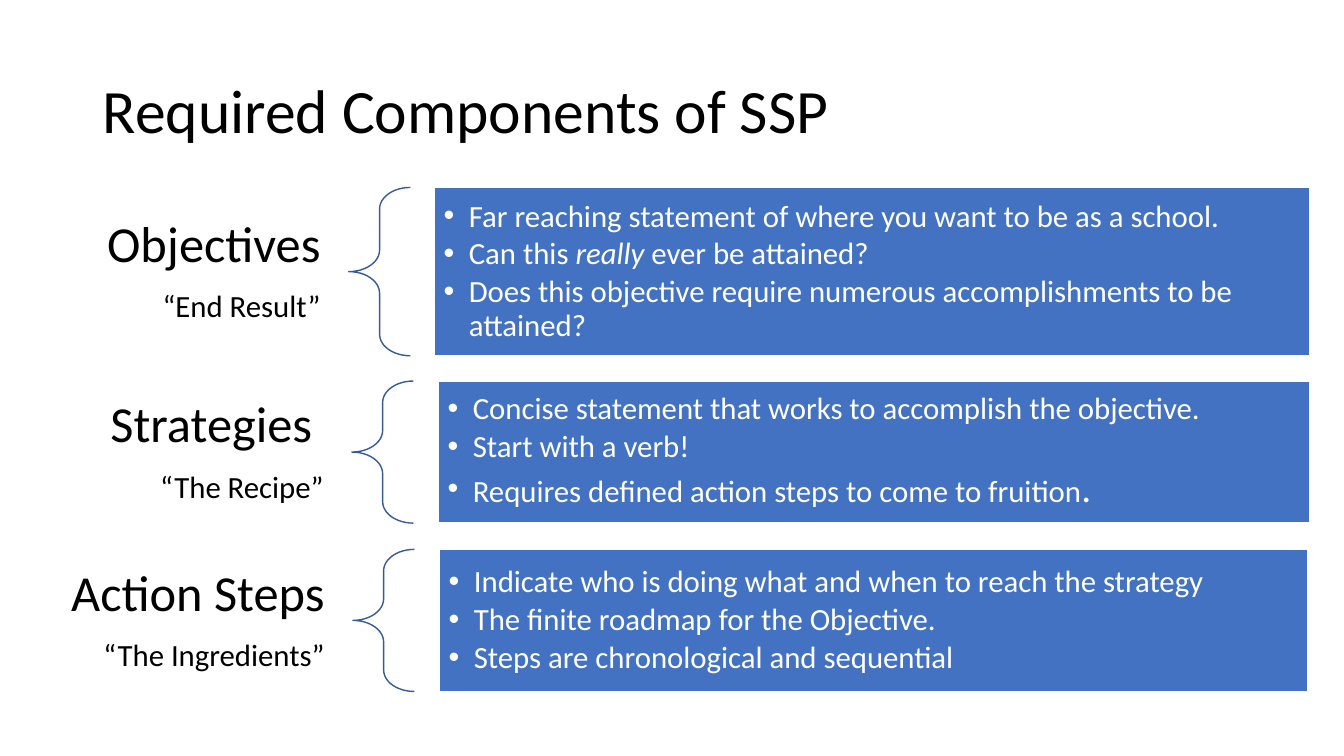
from dataclasses import dataclass

from lxml import etree
from pptx import Presentation
from pptx import util as u
from pptx.dml.color import RGBColor
from pptx.enum import shapes, text
from pptx.oxml.ns import qn


@dataclass(frozen=True)
class Theme:
    font: str = "Calibri"
    ink: str = "000000"
    paper: str = "FFFFFF"
    panel: str = "4372C3"
    brace: str = "345A99"
    title: float = 44
    heading: float = 36
    body: float = 22
    big_stop: float = 28


THEME = Theme()


def add_run(p, content, size=THEME.body, color=THEME.ink, italic=False):
    r = p.add_run()
    r.text = content
    r.font.name = THEME.font
    r.font.size = u.Pt(size)
    r.font.italic = italic
    r.font.color.rgb = RGBColor.from_string(color)


class SlideBuilder:
    def __init__(self, prs, theme):
        self.s = prs.slides.add_slide(prs.slide_layouts[6])
        self.theme = theme

    def frame(self, sp, inset_x, inset_y):
        tf = sp.text_frame
        tf.word_wrap = True
        tf.vertical_anchor = text.MSO_ANCHOR.MIDDLE
        tf.margin_left = tf.margin_right = u.Inches(inset_x)
        tf.margin_top = tf.margin_bottom = u.Inches(inset_y)
        return tf

    def paragraph(self, tf, index, align=text.PP_ALIGN.LEFT, before=0):
        p = tf.add_paragraph() if index else tf.paragraphs[0]
        p.alignment = align
        p.line_spacing = 0.9
        p.space_before = u.Pt(before if index else 0)
        return p

    def textbox(self, box, lines, inset_x, inset_y, **fmt):
        """Add a text box from (content, size) lines."""
        sp = self.s.shapes.add_textbox(*map(u.Inches, box))
        tf = self.frame(sp, inset_x, inset_y)
        for i, (content, size) in enumerate(lines):
            add_run(self.paragraph(tf, i, **fmt), content, size=size)

    def shape(self, kind, box, line):
        sp = self.s.shapes.add_shape(kind, *map(u.Inches, box))
        sp.shadow.inherit = False
        sp.line.color.rgb = RGBColor.from_string(line)
        sp.line.width = u.Pt(1)
        return sp

    def brace(self, box):
        sp = self.shape(shapes.MSO_SHAPE.LEFT_BRACE, box, self.theme.brace)
        sp.fill.background()
        sp.adjustments[0] = 0.35
        sp.adjustments[1] = 0.5

    def panel(self, box, bullets):
        """Add a filled rectangle; each bullet is a list of (content, format) runs."""
        sp = self.shape(shapes.MSO_SHAPE.RECTANGLE, box, self.theme.paper)
        sp.fill.solid()
        sp.fill.fore_color.rgb = RGBColor.from_string(self.theme.panel)
        tf = self.frame(sp, 0.09, 0.09)
        for i, runs in enumerate(bullets):
            p = self.paragraph(tf, i, before=3.3)
            self.bullet(p)
            for content, fmt in runs:
                add_run(p, content, color=self.theme.paper, **fmt)

    def bullet(self, p):
        pPr = p._p.get_or_add_pPr()
        pPr.set("marL", str(u.Inches(0.25)))
        pPr.set("indent", str(-u.Inches(0.25)))
        etree.SubElement(pPr, qn("a:buFont")).set("typeface", "Arial")
        etree.SubElement(pPr, qn("a:buChar")).set("char", "•")


# Heading, caption, top, height, brace left, panel left, panel width, bullets
COMPONENTS = [
    ("Objectives", "“End Result”", 1.86, 1.67, 3.46, 4.31, 8.68, [
        [("Far reaching statement of where you want to be as a school.", {})],
        [("Can this ", {}), ("really", {"italic": True}), (" ever be attained?", {})],
        [("Does this objective require numerous accomplishments to be attained?", {})],
    ]),
    ("Strategies ", "“The Recipe”", 3.78, 1.41, 3.49, 4.35, 8.64, [
        [("Concise statement that works to accomplish the objective.", {})],
        [("Start with a verb!", {})],
        [("Requires defined action steps to come to fruition", {}),
         (".", {"size": THEME.big_stop})],
    ]),
    ("Action Steps", "“The Ingredients”", 5.45, 1.41, 3.5, 4.36, 8.61, [
        [("Indicate who is doing what and when to reach the strategy", {})],
        [("The finite roadmap for the Objective.", {})],
        [("Steps are chronological and sequential", {})],
    ]),
]
LABEL_LEFT, LABEL_HEIGHT, BRACE_WIDTH = 0.42, 1.41, 0.61


def main():
    prs = Presentation()
    prs.slide_width, prs.slide_height = u.Inches(13.33), u.Inches(7.5)
    slide = SlideBuilder(prs, THEME)

    # Title
    slide.textbox((0.92, 0.4, 11.5, 1.45),
                  [("Required Components of SSP", THEME.title)], 0.1, 0.05)

    # One row per component: label, brace, panel
    for heading, caption, top, height, brace_x, panel_x, panel_w, bullets in COMPONENTS:
        label_top = top + (height - LABEL_HEIGHT) / 2
        slide.textbox((LABEL_LEFT, label_top, brace_x - LABEL_LEFT, LABEL_HEIGHT),
                      [(heading, THEME.heading), (caption, THEME.body)], 0.28, 0.1,
                      align=text.PP_ALIGN.RIGHT, before=12.6)
        slide.brace((brace_x, top, BRACE_WIDTH, height))
        slide.panel((panel_x, top, panel_w, height), bullets)

    prs.save("out.pptx")


if __name__ == "__main__":
    main()
